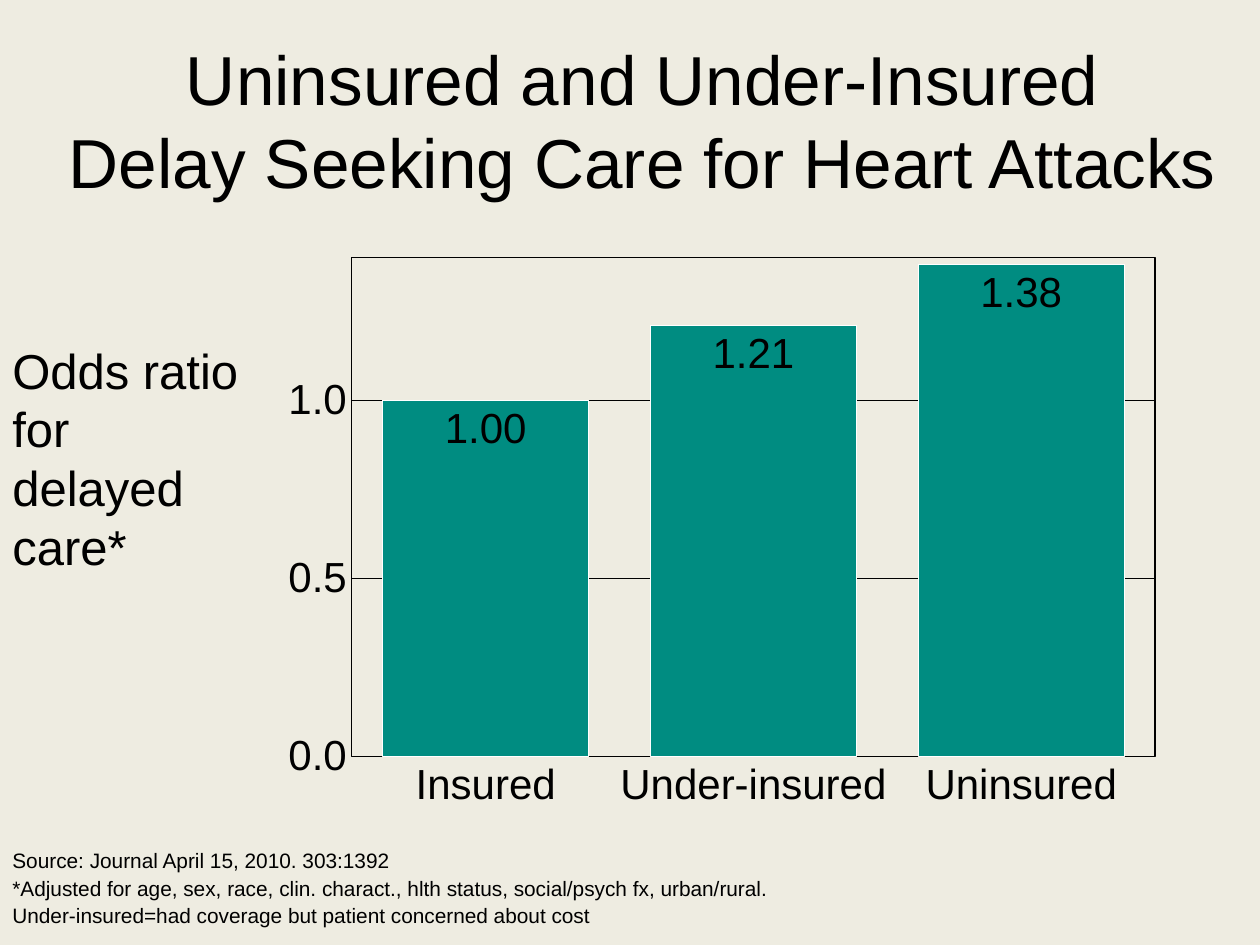
import pptx
import pptx.util
import pptx.chart.data
import pptx.dml.color
import pptx.enum.chart
import pptx.enum.text
import pptx.oxml
import pptx.oxml.ns

SCALE = 914400 // 126  # EMU per px
FONT = "Arial"
COLORS = {"background": "EEECE1", "ink": "000000", "bar": "008C81", "edge": "FFFFFF"}
ALIGN = pptx.enum.text.PP_ALIGN
ANCHOR = pptx.enum.text.MSO_ANCHOR


def color(name):
    return pptx.dml.color.RGBColor.from_string(COLORS[name])


def set_line(line, name, points):
    line.color.rgb = color(name)
    line.width = pptx.util.Pt(points)


deck = pptx.Presentation()
deck.slide_width = 1260 * SCALE
deck.slide_height = 945 * SCALE
page = deck.slides.add_slide(deck.slide_layouts[6])
page.background.fill.solid()
page.background.fill.fore_color.rgb = color("background")

# Title, source notes and axis caption
texts = [
    {"place": (44, 28, 1197, 183), "size": 39.6, "anchor": ANCHOR.MIDDLE,
     "format": {"alignment": ALIGN.CENTER},
     "lines": ["Uninsured and Under-Insured\vDelay Seeking Care for Heart Attacks"]},
    {"place": (0, 828, 845, 117), "size": 11.9, "anchor": ANCHOR.MIDDLE,
     "format": {"alignment": ALIGN.LEFT, "line_spacing": 1.1},
     "lines": ["Source: Journal April 15, 2010. 303:1392",
               "*Adjusted for age, sex, race, clin. charact., hlth status, "
               "social/psych fx, urban/rural.",
               "Under-insured=had coverage but patient concerned about cost"]},
    {"place": (0, 334, 256, 251), "size": 28, "anchor": ANCHOR.TOP,
     "format": {"alignment": ALIGN.LEFT},
     "lines": ["Odds ratio for delayed care*"]},
]
for text in texts:
    box = page.shapes.add_textbox(*[px * SCALE for px in text["place"]])
    frame = box.text_frame
    frame.word_wrap = True
    frame.vertical_anchor = text["anchor"]
    frame.text = "\n".join(text["lines"])
    for para in frame.paragraphs:
        for name, value in text["format"].items():
            setattr(para, name, value)
        for span in para.runs:
            span.font.name = FONT
            span.font.size = pptx.util.Pt(text["size"])
            span.font.color.rgb = color("ink")

# Odds ratio chart
data = pptx.chart.data.CategoryChartData()
data.categories = ["Insured", "Under-insured", "Uninsured"]
data.add_series("Series 1", [1, 1.21, 1.38])
chart = page.shapes.add_chart(
    pptx.enum.chart.XL_CHART_TYPE.COLUMN_CLUSTERED,
    *[px * SCALE for px in (242, 233, 931, 591)], data).chart
chart.has_legend = False
chart.has_title = False
chart.font.name = FONT
chart.font.size = pptx.util.Pt(24)
chart.font.color.rgb = color("ink")

# Bars and their values
plot = chart.plots[0]
plot.gap_width = 30
plot.vary_by_categories = False
bars = plot.series[0]
bars.format.fill.solid()
bars.format.fill.fore_color.rgb = color("bar")
set_line(bars.format.line, "edge", 0.75)
label_format = {
    "show_value": True,
    "number_format": "#,##0.00",
    "number_format_is_linked": False,
    "position": pptx.enum.chart.XL_LABEL_POSITION.INSIDE_END,
}
for name, value in label_format.items():
    setattr(bars.data_labels, name, value)

# Axes and gridlines
for axis, points in ((chart.category_axis, 1), (chart.value_axis, 0.75)):
    axis.major_tick_mark = pptx.enum.chart.XL_TICK_MARK.NONE
    axis.minor_tick_mark = pptx.enum.chart.XL_TICK_MARK.NONE
    set_line(axis.format.line, "ink", points)
scale_format = {"minimum_scale": 0, "maximum_scale": 1.4, "major_unit": 0.5,
                "has_major_gridlines": True}
for name, value in scale_format.items():
    setattr(chart.value_axis, name, value)
chart.value_axis.tick_labels.number_format = "#,##0.0"
chart.value_axis.tick_labels.number_format_is_linked = False
set_line(chart.value_axis.major_gridlines.format.line, "ink", 0.75)

# Fixed plot area with a thin frame
area = chart.element.find(".//" + pptx.oxml.ns.qn("c:plotArea"))
for old in area.findall(pptx.oxml.ns.qn("c:layout")):
    area.remove(old)
spaces = pptx.oxml.ns.nsdecls("c", "a")
layout = {"layoutTarget": "inner", "xMode": "edge", "yMode": "edge",
          "x": 0.118, "y": 0.042, "w": 0.863, "h": 0.844}
parts = "".join(f'<c:{name} val="{value}"/>' for name, value in layout.items())
area.insert(0, pptx.oxml.parse_xml(
    f"<c:layout {spaces}><c:manualLayout>{parts}</c:manualLayout></c:layout>"))
area.append(pptx.oxml.parse_xml(
    f'<c:spPr {spaces}><a:noFill/><a:ln w="9525"><a:solidFill>'
    f'<a:srgbClr val="{COLORS["ink"]}"/></a:solidFill></a:ln></c:spPr>'))

deck.save("out.pptx")
